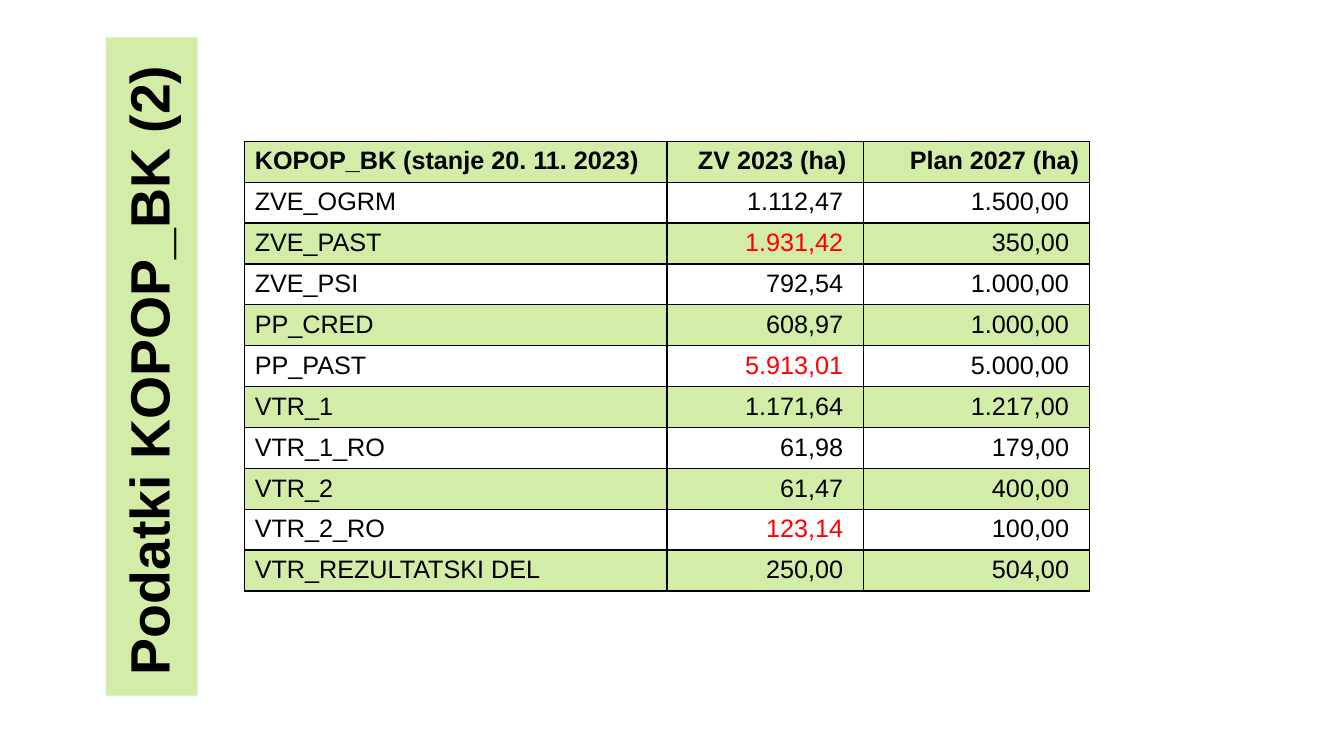
"""Build a slide with a sideways title and a table of areas under KOPOP_BK."""
from lxml import etree
from pptx import Presentation
from pptx.dml.color import RGBColor
from pptx.enum.shapes import MSO_SHAPE
from pptx.enum.text import MSO_ANCHOR, PP_ALIGN
from pptx.oxml import parse_xml
from pptx.oxml.ns import nsdecls
from pptx.util import Cm, Pt

RECTANGLE = MSO_SHAPE.RECTANGLE
MIDDLE = MSO_ANCHOR.MIDDLE
LEFT, RIGHT = PP_ALIGN.LEFT, PP_ALIGN.RIGHT
GREEN = RGBColor(0xD3, 0xED, 0xA9)
WHITE = RGBColor(0xFF, 0xFF, 0xFF)
BLACK = RGBColor(0x00, 0x00, 0x00)
RED = RGBColor(0xFF, 0x00, 0x00)
FONT = "Arial"

HEADER = ("KOPOP_BK (stanje 20. 11. 2023)", " ZV 2023 (ha) ", "Plan 2027 (ha)")
AREAS = [
    ("ZVE_OGRM", "1.112,47", "1.500,00"),
    ("ZVE_PAST", "1.931,42", "350,00"),
    ("ZVE_PSI", "792,54", "1.000,00"),
    ("PP_CRED", "608,97", "1.000,00"),
    ("PP_PAST", "5.913,01", "5.000,00"),
    ("VTR_1", "1.171,64", "1.217,00"),
    ("VTR_1_RO", "61,98", "179,00"),
    ("VTR_2", "61,47", "400,00"),
    ("VTR_2_RO", "123,14", "100,00"),
    ("VTR_REZULTATSKI DEL", "250,00", "504,00"),
]
COLUMN_WIDTHS = (Cm(10.64), Cm(4.95), Cm(5.69))
ROW_HEIGHT = Cm(1.03)


def hectares(text):
    return float(text.replace(".", "").replace(",", "."))


def style_text(para, size, color, bold):
    para.font.name = FONT
    para.font.size = Pt(size)
    para.font.bold = bold
    para.font.color.rgb = color


deck = Presentation()
deck.slide_width, deck.slide_height = Cm(33.87), Cm(19.05)
page = deck.slides.add_slide(deck.slide_layouts[6])

rows = [HEADER] + AREAS
frame = page.shapes.add_table(len(rows), len(HEADER), Cm(6.17), Cm(3.56),
                              sum(COLUMN_WIDTHS), ROW_HEIGHT * len(rows))
table = frame.table
table.horz_banding = False
for column, width in zip(table.columns, COLUMN_WIDTHS):
    column.width = width

for row_index, values in enumerate(rows):
    is_header = row_index == 0
    table.rows[row_index].height = ROW_HEIGHT
    over_plan = not is_header and hectares(values[1]) > hectares(values[2])
    for column_index, value in enumerate(values):
        cell = table.cell(row_index, column_index)
        if not is_header:
            cell.margin_left, cell.margin_right = Cm(0.25), Cm(0.51)
            cell.margin_top, cell.margin_bottom = Cm(0.15), Cm(0.03)
        cell_properties = cell._tc.get_or_add_tcPr()
        for side in ("lnL", "lnR", "lnT", "lnB"):
            border = parse_xml(f'<a:{side} {nsdecls("a")} w="{Pt(1)}"/>')
            fill = etree.SubElement(border, border.tag.replace(side, "solidFill"))
            etree.SubElement(fill, border.tag.replace(side, "srgbClr"), val=str(BLACK))
            cell_properties.append(border)
        cell.fill.solid()
        cell.fill.fore_color.rgb = WHITE if row_index % 2 else GREEN
        para = cell.text_frame.paragraphs[0]
        para.text = value
        para.alignment = RIGHT if column_index else LEFT
        color = RED if over_plan and column_index == 1 else BLACK
        style_text(para, 18, color, is_header)

title = page.shapes.add_shape(RECTANGLE, Cm(-4.47), Cm(8.08), Cm(16.59), Cm(2.31))
title.rotation = 270
title.shadow.inherit = False
title.fill.solid()
title.fill.fore_color.rgb = GREEN
title.line.fill.background()
title_text = title.text_frame
title_text.word_wrap = True
title_text.vertical_anchor = MIDDLE
title_text.margin_left, title_text.margin_right = Cm(0.51), Cm(0.25)
title_text.margin_top = title_text.margin_bottom = Cm(0.13)
para = title_text.paragraphs[0]
para.text = "Podatki KOPOP_BK (2)"
para.alignment = LEFT
para.line_spacing = 0.9
style_text(para, 39.6, BLACK, True)

deck.save("out.pptx")
